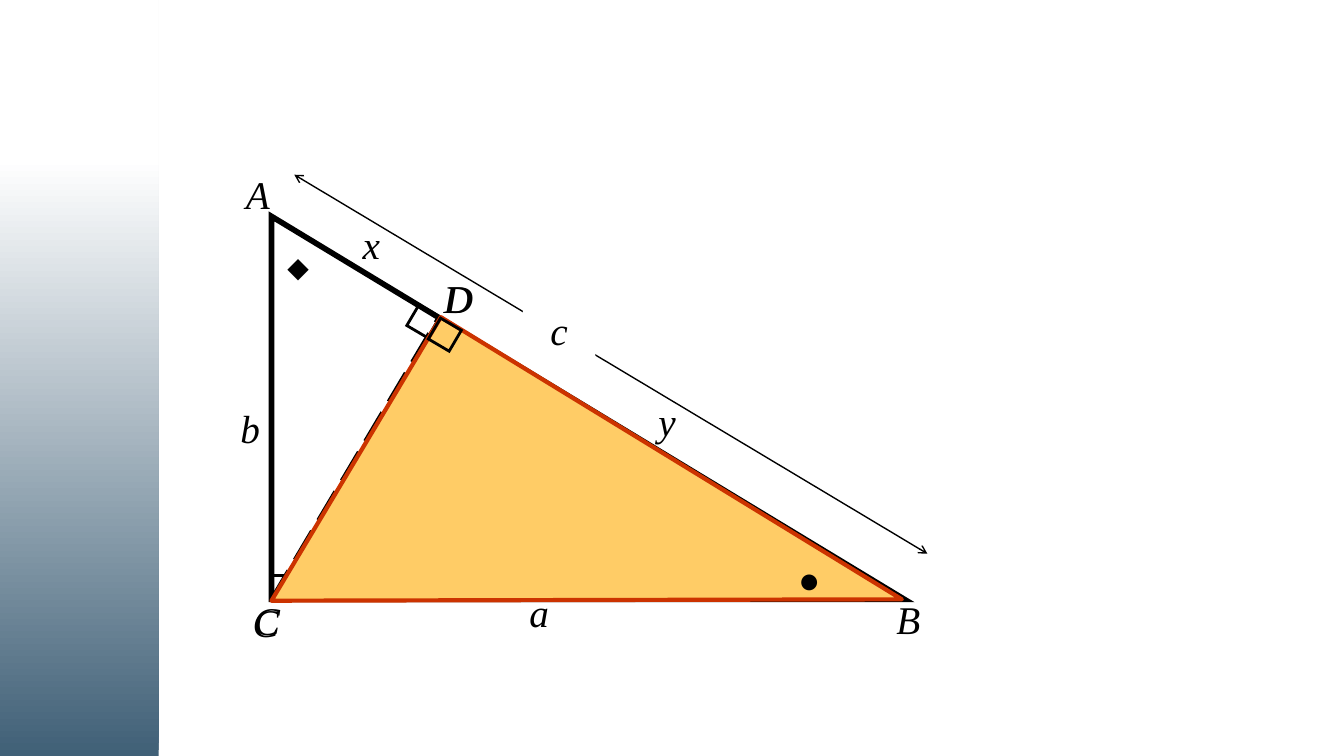
from lxml import etree
from pptx import Presentation
from pptx import util as u
from pptx.dml.color import RGBColor
from pptx.enum import dml, shapes, text
from pptx.oxml import ns

# The slide is a grid of square cells, 100 columns wide.
CELL = u.Inches(0.1)
COLUMNS, ROWS = 100, 56.25

BLACK = RGBColor(0x00, 0x00, 0x00)
INK = RGBColor(0x01, 0x01, 0x01)
WHITE = RGBColor(0xFF, 0xFF, 0xFF)
SLATE = RGBColor(0x40, 0x60, 0x77)
AMBER = RGBColor(0xFF, 0xCC, 0x66)
RUST = RGBColor(0xCC, 0x33, 0x00)

CORNER = 1.8  # side of a right-angle mark
TILT = 300.4  # slope of the hypotenuse marks


def cells(*counts):
    return [u.Emu(round(count * CELL)) for count in counts]


def style(shape, fill=None, line=None, width=0):
    shape.shadow.inherit = False
    if fill is None:
        shape.fill.background()
    else:
        shape.fill.solid()
        shape.fill.fore_color.rgb = fill
    if line is None:
        shape.line.fill.background()
    else:
        shape.line.color.rgb = line
        shape.line.width = u.Pt(width)


def sharpen_corners(shape):
    outline = shape.line._get_or_add_ln()
    etree.SubElement(outline, ns.qn("a:miter"), lim="800000")


def add_sidebar(slide):
    sidebar = slide.shapes.add_shape(
        shapes.MSO_SHAPE.RECTANGLE, *cells(0, 0, 11.8, ROWS))
    style(sidebar)
    sidebar.fill.gradient()
    sidebar.fill.gradient_angle = 90
    stops = sidebar.fill.gradient_stops
    for stop, color, position in zip(stops, (SLATE, WHITE), (0, 0.79)):
        stop.color.rgb = color
        stop.position = position


def add_right_angle(slide, left, top, tilt=0, fill=None):
    mark = slide.shapes.add_shape(
        shapes.MSO_SHAPE.RECTANGLE, *cells(left, top, CORNER, CORNER))
    style(mark, fill, BLACK, 1.5)
    sharpen_corners(mark)
    mark.rotation = tilt


def add_outer_triangle(slide):
    triangle = slide.shapes.add_shape(
        shapes.MSO_SHAPE.RIGHT_TRIANGLE, *cells(20.2, 16.1, 47.1, 28.5))
    style(triangle, line=BLACK, width=3)
    sharpen_corners(triangle)


def add_inner_triangle(slide):
    c, d, b = cells(20.2, 44.7), cells(32.8, 23.6), cells(67.1, 44.6)
    builder = slide.shapes.build_freeform(*c)
    builder.add_line_segments([d, b], close=True)
    style(builder.convert_to_shape(), AMBER, RUST, 2.25)


def add_line(slide, start, end, width):
    line = slide.shapes.add_connector(
        shapes.MSO_CONNECTOR.STRAIGHT, *cells(*start, *end))
    line.line.color.rgb = INK
    line.line.width = u.Pt(width)
    etree.SubElement(line._element.spPr, ns.qn("a:effectLst"))
    return line


def add_double_arrow(slide, start, end):
    arrow = add_line(slide, start, end, 0.75)
    outline = arrow.line._get_or_add_ln()
    for tag in ("a:headEnd", "a:tailEnd"):
        etree.SubElement(outline, ns.qn(tag), type="arrow", w="sm", len="sm")


def write(shape, wording, size, font, italic):
    shape.text_frame.word_wrap = True
    paragraph = shape.text_frame.paragraphs[0]
    paragraph.text = wording
    paragraph.font.size = u.Pt(size)
    paragraph.font.name = font
    paragraph.font.italic = italic
    paragraph.font.color.rgb = BLACK
    return paragraph


def add_side_name(slide, name, *place):
    box = slide.shapes.add_textbox(*cells(*place))
    write(box, name, 21, "Times New Roman", True)
    return box


def add_vertex_name(slide, name, left, top, width=3.2):
    frame = add_side_name(slide, name, left, top, width, 4.4).text_frame
    frame.margin_left = frame.margin_right = 0
    frame.margin_top = frame.margin_bottom = 0


def add_angle_symbol(slide, symbol, size, *place):
    box = slide.shapes.add_textbox(*cells(*place))
    write(box, symbol, size, "Calibri", False)
    box.text_frame.auto_size = text.MSO_AUTO_SIZE.SHAPE_TO_FIT_TEXT


def add_hypotenuse_name(slide):
    """The letter c on a white patch that interrupts the double arrow."""
    patch = slide.shapes.add_shape(
        shapes.MSO_SHAPE.RECTANGLE, *cells(38.9, 22.4, 5.4, 4.3))
    style(patch, WHITE)
    paragraph = write(patch, "c", 21, "Times New Roman", True)
    paragraph.alignment = text.PP_ALIGN.CENTER


def add_whole_triangle(slide):
    add_right_angle(slide, 20.2, 42.8)
    add_right_angle(slide, 30.6, 23, TILT, WHITE)
    add_outer_triangle(slide)
    add_vertex_name(slide, "D", 33, 20.4)
    altitude = add_line(slide, (20.2, 44.6), (32.6, 23.7), 2.25)
    altitude.line.dash_style = dml.MSO_LINE.LONG_DASH
    add_vertex_name(slide, "A", 18.3, 12.7)
    add_vertex_name(slide, "C", 18.8, 44.5, 3)
    add_double_arrow(slide, (69, 41.2), (21.9, 13))
    add_hypotenuse_name(slide)
    add_side_name(slide, "b", 16.9, 29.6, 6.3, 5.9)
    add_side_name(slide, "x", 26, 15.9, 7.8, 5.4)


def add_highlighted_triangle(slide):
    add_inner_triangle(slide)
    add_right_angle(slide, 32.2, 24, TILT)
    add_vertex_name(slide, "D", 33.1, 20.4)
    add_vertex_name(slide, "C", 18.9, 44.4, 3)
    add_vertex_name(slide, "B", 66.7, 44.3)
    add_side_name(slide, "a", 38.4, 43.3, 6.5, 5.5)
    add_side_name(slide, "y", 48, 29.1, 7.1, 6.3)
    add_angle_symbol(slide, "•", 24, 58.4, 40.5, 5, 5)


def main():
    deck = Presentation()
    deck.slide_width, deck.slide_height = cells(COLUMNS, ROWS)
    slide = deck.slides.add_slide(deck.slide_layouts[6])
    add_sidebar(slide)
    add_whole_triangle(slide)
    add_highlighted_triangle(slide)
    add_angle_symbol(slide, "◆", 15, 20.4, 18.1, 5, 3.5)
    deck.save("out.pptx")


if __name__ == "__main__":
    main()
